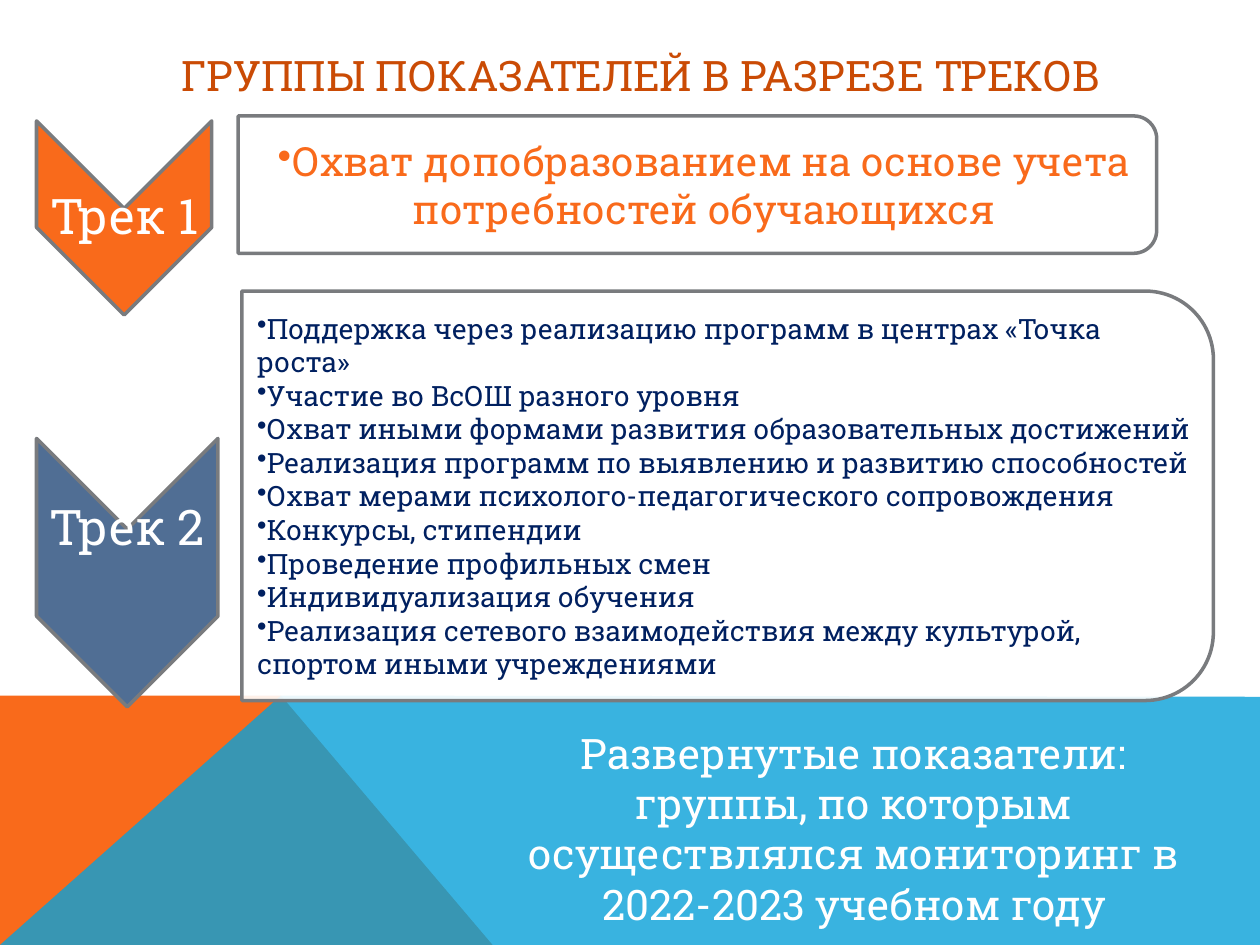
from dataclasses import dataclass

from lxml.etree import SubElement
from pptx import Presentation
from pptx.dml.color import RGBColor
from pptx.enum.shapes import MSO_SHAPE
from pptx.enum.text import MSO_ANCHOR, MSO_AUTO_SIZE, PP_ALIGN
from pptx.oxml.ns import qn
from pptx.util import Inches, Pt


@dataclass(frozen=True)
class Theme:
    font: str = "Roboto Slab"
    white: str = "FFFFFF"
    orange: str = "F96A1B"
    rust: str = "CA4B05"
    blue: str = "08A1D9"
    slate: str = "506E94"
    navy: str = "002060"
    edge: str = "797B7E"
    head: int = 24
    label: int = 28
    lead: int = 23
    item: int = 16


@dataclass(frozen=True)
class Box:
    left: float
    top: float
    width: float
    height: float

    def emu(self) -> list:
        return [Inches(v) for v in (self.left, self.top, self.width, self.height)]

    def turned(self) -> "Box":
        """Frame that covers this box once it is rotated by 90 degrees."""
        shift = (self.width - self.height) / 2
        return Box(self.left + shift, self.top - shift, self.height, self.width)


@dataclass(frozen=True)
class Track:
    name: str
    color: str
    arrow: Box
    label: Box
    panel: Box
    area: Box
    lines: tuple
    ink: str
    size: int
    align: PP_ALIGN
    inset: float
    pad: float


THEME = Theme()
TRACKS = (
    Track("Трек 1", THEME.orange,
          Box(0.29, 0.96, 1.39, 1.54), Box(0.29, 1.66, 1.39, 0.15),
          Box(1.89, 0.92, 7.29, 1.09), Box(1.89, 0.97, 7.24, 0.99),
          ("Охват допобразованием на основе учета потребностей обучающихся",),
          THEME.orange, THEME.lead, PP_ALIGN.CENTER, 0.18, 0.02),
    Track("Трек 2", THEME.slate,
          Box(0.29, 3.48, 1.44, 2.13), Box(0.29, 3.86, 1.44, 0.68),
          Box(1.92, 2.31, 7.71, 3.25), Box(1.92, 2.47, 7.55, 2.93),
          ("Поддержка через реализацию программ в центрах «Точка роста»",
           "Участие во ВсОШ разного уровня",
           "Охват иными формами развития образовательных достижений",
           "Реализация программ по выявлению и развитию способностей",
           "Охват мерами психолого-педагогического сопровождения",
           "Конкурсы, стипендии",
           "Проведение профильных смен",
           "Индивидуализация обучения",
           "Реализация сетевого взаимодействия между культурой, спортом иными учреждениями"),
          THEME.navy, THEME.item, PP_ALIGN.LEFT, 0.12, 0.01),
)


def paint(shape, color: str, alpha: int = 100, edge: str = "") -> None:
    shape.shadow.inherit = False
    shape.fill.solid()
    shape.fill.fore_color.rgb = RGBColor.from_string(color)
    if alpha < 100:
        tint = shape.element.spPr.xpath("a:solidFill/a:srgbClr")[0]
        SubElement(tint, qn("a:alpha"), val=str(alpha * 1000))
    if edge:
        shape.line.color.rgb = RGBColor.from_string(edge)
        shape.line.width = Pt(2)
    else:
        shape.line.fill.background()


def polygon(shapes, points: tuple, color: str, alpha: int = 100) -> None:
    first, *rest = [(Inches(x), Inches(y)) for x, y in points]
    pen = shapes.build_freeform(*first)
    pen.add_line_segments(rest, close=True)
    paint(pen.convert_to_shape(), color, alpha)


def turn(shapes, kind: MSO_SHAPE, box: Box, color: str, alpha: int = 100) -> None:
    """Draw a preset turned clockwise by 90 degrees so that it fills the box."""
    shape = shapes.add_shape(kind, *box.turned().emu())
    shape.rotation = 90
    paint(shape, color, alpha, THEME.edge)


def write(shape, lines: tuple, size: int, color: str, align: PP_ALIGN,
          frame: dict, para: dict, bullet: bool = False) -> None:
    text = shape.text_frame
    base = {"word_wrap": True, "auto_size": MSO_AUTO_SIZE.NONE}
    for key, value in (base | frame).items():
        setattr(text, key, value)
    text.text = "\n".join(lines)
    for item in text.paragraphs:
        for key, value in ({"alignment": align} | para).items():
            setattr(item, key, value)
        props = item._p.get_or_add_pPr()
        props.set("marL", "0")
        props.set("indent", "0")
        if bullet:
            SubElement(props, qn("a:buChar"), char="•")
        else:
            SubElement(props, qn("a:buNone"))
        font = item.runs[0].font
        for key, value in {"name": THEME.font, "size": Pt(size), "bold": False}.items():
            setattr(font, key, value)
        font.color.rgb = RGBColor.from_string(color)


def insets(left: float, rest: float) -> dict:
    return {"vertical_anchor": MSO_ANCHOR.MIDDLE, "margin_left": Inches(left),
            **{f"margin_{side}": Inches(rest) for side in ("top", "right", "bottom")}}


def draw(shapes, track: Track) -> None:
    turn(shapes, MSO_SHAPE.CHEVRON, track.arrow, track.color)
    label = shapes.add_textbox(*track.label.emu())
    write(label, (track.name,), THEME.label, THEME.white, PP_ALIGN.CENTER,
          insets(0.02, 0.02), {"line_spacing": 0.9})
    turn(shapes, MSO_SHAPE.ROUND_2_SAME_RECTANGLE, track.panel, THEME.white, 90)
    area = shapes.add_textbox(*track.area.emu())
    write(area, track.lines, track.size, track.ink, track.align,
          insets(track.inset, track.pad), {"level": 1}, bullet=True)


def place(shapes, holder, box: Box) -> None:
    """Move a placeholder to the box and to the front."""
    holder.left, holder.top, holder.width, holder.height = box.emu()
    shapes.element.append(holder.element)


def main() -> None:
    deck = Presentation()
    deck.slide_width, deck.slide_height = Inches(10), Inches(7.5)
    slide = deck.slides.add_slide(deck.slide_layouts[1])
    shapes = slide.shapes
    title, body = slide.placeholders

    peak, low = (2.23, 5.52), (0, 7.5)
    polygon(shapes, (low, (0, 5.52), peak, (3.91, 7.5)), THEME.orange)
    polygon(shapes, (low, peak, (10, 5.53), (10, 7.5)), THEME.blue, 80)

    place(shapes, title, Box(0.98, 0.29, 8.22, 0.6))
    write(title, ("ГРУППЫ ПОКАЗАТЕЛЕЙ В РАЗРЕЗЕ ТРЕКОВ",), THEME.head, THEME.rust,
          PP_ALIGN.CENTER, {"vertical_anchor": MSO_ANCHOR.MIDDLE}, {})
    for track in TRACKS:
        draw(shapes, track)
    place(shapes, body, Box(3.82, 5.72, 5.91, 1.1))
    write(body, ("Развернутые показатели: группы, по которым осуществлялся "
                 "мониторинг в 2022-2023 учебном году",), THEME.head, THEME.white,
          PP_ALIGN.CENTER, {"vertical_anchor": MSO_ANCHOR.TOP}, {"space_before": Pt(8)})
    deck.save("out.pptx")


if __name__ == "__main__":
    main()
